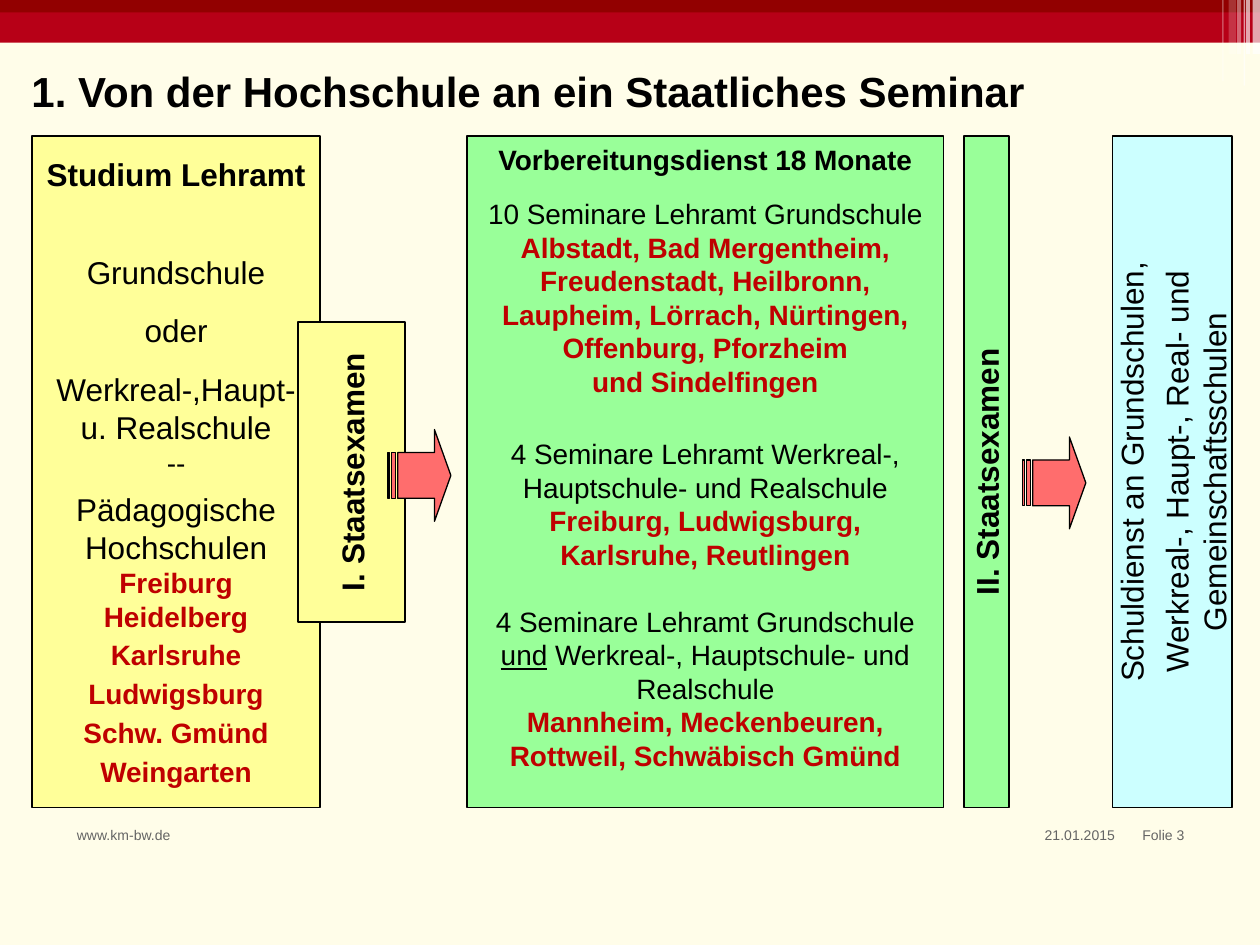
from lxml import etree
from pptx import Presentation
from pptx.dml.color import RGBColor
from pptx.enum.shapes import MSO_SHAPE
from pptx.enum.text import MSO_ANCHOR, MSO_AUTO_SIZE, PP_ALIGN
from pptx.oxml.ns import qn
from pptx.util import Cm, Pt

RECT, ARROW = MSO_SHAPE.RECTANGLE, MSO_SHAPE.STRIPED_RIGHT_ARROW
TOP, MIDDLE = MSO_ANCHOR.TOP, MSO_ANCHOR.MIDDLE
LEFT, CENTER, RIGHT = PP_ALIGN.LEFT, PP_ALIGN.CENTER, PP_ALIGN.RIGHT
BLACK, RED, GREY, WHITE = "000000", "BF0000", "646464", "FFFFFF"
YELLOW, GREEN, BLUE, CORAL = "FFFF99", "99FF99", "CCFFFF", "FF6D6D"

TITLE = "1. Von der Hochschule an ein Staatliches Seminar"

# Paragraphs: text, size, bold, colour, space before; _x_ is underlined
STUDY = [
    ("Studium Lehramt", 18, True, BLACK, 0),
    ("Grundschule", 18, False, BLACK, 34),
    ("oder", 18, False, BLACK, 12),
    ("Werkreal-,Haupt-\nu. Realschule", 18, False, BLACK, 12),
    ("--", 16, False, BLACK, 0),
    ("Pädagogische\nHochschulen", 18, False, BLACK, 6),
    ("Freiburg", 16, True, RED, 0),
    ("Heidelberg", 16, True, RED, 0),
    ("Karlsruhe", 16, True, RED, 3),
    ("Ludwigsburg", 16, True, RED, 3),
    ("Schw. Gmünd", 16, True, RED, 3),
    ("Weingarten", 16, True, RED, 3),
]
SERVICE = [
    ("Vorbereitungsdienst 18 Monate", 16, True, BLACK, 0),
    ("10 Seminare Lehramt Grundschule", 16, False, BLACK, 12),
    ("Albstadt, Bad Mergentheim,\nFreudenstadt, Heilbronn,\n"
     "Laupheim, Lörrach, Nürtingen,\nOffenburg, Pforzheim\n"
     "und Sindelfingen", 16, True, RED, 0),
    ("4 Seminare Lehramt Werkreal-,\nHauptschule- und Realschule",
     16, False, BLACK, 22),
    ("Freiburg, Ludwigsburg,\nKarlsruhe, Reutlingen", 16, True, RED, 0),
    ("4 Seminare Lehramt Grundschule\n"
     "_und_ Werkreal-, Hauptschule- und\nRealschule", 16, False, BLACK, 19),
    ("Mannheim, Meckenbeuren,\nRottweil, Schwäbisch Gmünd",
     16, True, RED, 0),
]
SCHOOLS = [
    ("Schuldienst an Grundschulen,", 18, False, BLACK, 0),
    ("Werkreal-, Haupt-, Real- und", 18, False, BLACK, 4),
    ("Gemeinschaftsschulen", 18, False, BLACK, 0),
]
EXAM_1 = [("I. Staatsexamen", 18, True, BLACK, 0)]
EXAM_2 = [("II. Staatsexamen", 18, True, BLACK, 0)]

# Box as seen (left, top, width, height in cm), fill, text, anchor, turned
PANELS = [
    ((22.43, 2.74, 2.41, 13.54), BLUE, SCHOOLS, MIDDLE, True),
    ((0.64, 2.74, 5.82, 13.54), YELLOW, STUDY, MIDDLE, False),
    ((6.01, 6.49, 2.16, 6.05), YELLOW, EXAM_1, MIDDLE, True),
    ((19.43, 2.74, 0.91, 13.54), GREEN, EXAM_2, MIDDLE, True),
    ((9.42, 2.74, 9.6, 13.54), GREEN, SERVICE, TOP, False),
]
ARROWS = [(7.82, 8.66), (20.62, 8.81)]
BARS = [("B70017", 0.86), ("920000", 0.25)]
# Left, width, height in cm, opacity in percent
STRIPES = [
    (24.64, 0.03, 1.63, 30), (24.77, 0.15, 1.09, 20),
    (24.94, 0.08, 1.09, 40), (25.07, 0.03, 1.73, 60),
    (25.12, 0.08, 1.09, 65), (25.25, 0.15, 1.09, 65),
]
# Text, left, width, alignment
FOOTER = [
    ("www.km-bw.de", 1.3, 7.49, LEFT),
    ("21.01.2015", 18.49, 4.24, RIGHT),
    ("Folie 3", 21.13, 3, RIGHT),
]


def rgb(code):
    return RGBColor.from_string(code)


def style(para, size, bold, color, align):
    para.alignment = align
    font = para.font
    font.name, font.size, font.bold = "Arial", Pt(size), bold
    font.color.rgb = rgb(color)


def draw(kind, box, fill, line=None, alpha=None):
    shape = slide.shapes.add_shape(kind, *map(Cm, box))
    shape.shadow.inherit = False
    shape.fill.solid()
    shape.fill.fore_color.rgb = rgb(fill)
    if line:
        shape.line.color.rgb = rgb(BLACK)
        shape.line.width = Pt(line)
    else:
        shape.line.fill.background()
    if alpha:
        tint = shape.fill._xPr.find(".//" + qn("a:srgbClr"))
        etree.SubElement(tint, qn("a:alpha"), val=str(alpha * 1000))
    return shape


def write(frame, items):
    """Fill the frame with centred paragraphs at 1.2 times the font size."""
    for n, (text, size, bold, color, before) in enumerate(items):
        para = frame.add_paragraph() if n else frame.paragraphs[0]
        for i, row in enumerate(text.split("\n")):
            if i:
                para.add_line_break()
            for j, part in enumerate(row.split("_")):
                if part:
                    run = para.add_run()
                    run.text = part
                    if j % 2:
                        run.font.underline = True
        para.line_spacing = Pt(round(size * 1.2, 1))
        para.space_before = Pt(before)
        style(para, size, bold, color, CENTER)


def panel(box, fill, items, anchor, turned):
    left, top, wide, high = box
    if turned:
        shift = (wide - high) / 2
        box = (left + shift, top - shift, high, wide)
    shape = draw(RECT, box, fill, 1)
    if turned:
        shape.rotation = 270
    frame = shape.text_frame
    frame.word_wrap = False
    frame.vertical_anchor = anchor
    write(frame, items)


prs = Presentation()
prs.slide_width, prs.slide_height = Cm(25.4), Cm(19.05)
slide = prs.slides.add_slide(prs.slide_layouts[5])
slide.background.fill.solid()
slide.background.fill.fore_color.rgb = rgb("FFFDE9")

for color, high in BARS:
    draw(RECT, (0, 0, 25.4, high), color)
for left, wide, high, alpha in STRIPES:
    draw(RECT, (left, 0, wide, high), WHITE, alpha=alpha)

title = slide.shapes.title
title.left, title.top = Cm(0.38), Cm(1.19)
title.width, title.height = Cm(20.73), Cm(1.27)
head = title.text_frame
head.text = TITLE
head.word_wrap = False
head.auto_size = MSO_AUTO_SIZE.NONE
head.vertical_anchor = MIDDLE
style(head.paragraphs[0], 24, True, BLACK, LEFT)

for row in PANELS:
    panel(*row)
for left, top in ARROWS:
    arrow = draw(ARROW, (left, top, 1.27, 1.85), CORAL, 0.75)
    arrow.adjustments[0], arrow.adjustments[1] = 0.5, 0.26

for text, left, wide, align in FOOTER:
    note = slide.shapes.add_textbox(Cm(left), Cm(16.54), Cm(wide), Cm(0.99))
    note.text_frame.word_wrap = True
    note.text_frame.text = text
    style(note.text_frame.paragraphs[0], 8, False, GREY, align)

prs.save("out.pptx")
